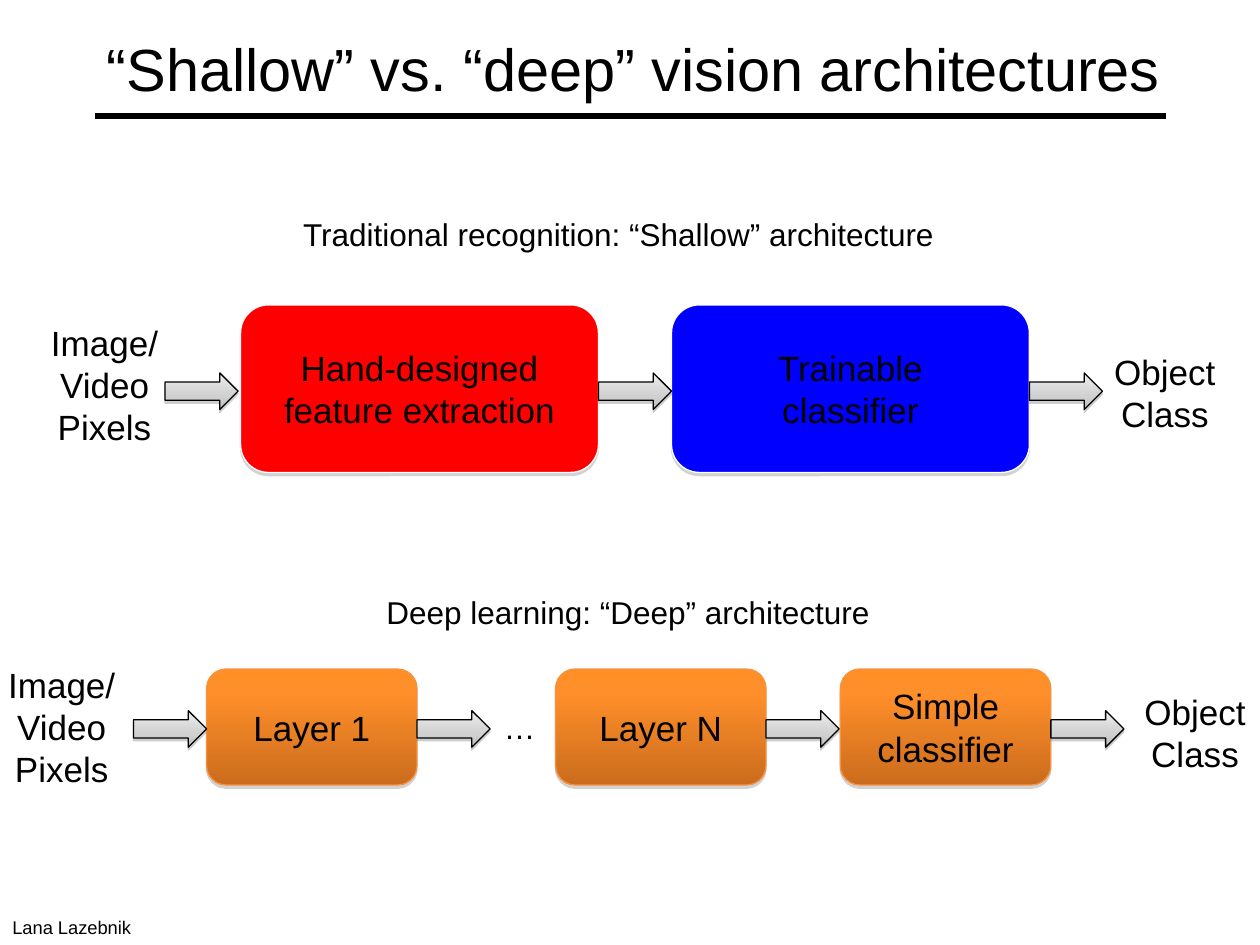
from dataclasses import dataclass

from lxml import etree
from pptx import Presentation
from pptx.dml.color import RGBColor
from pptx.enum.shapes import MSO_CONNECTOR, MSO_SHAPE
from pptx.enum.text import MSO_ANCHOR, MSO_AUTO_SIZE, PP_ALIGN
from pptx.oxml.ns import qn
from pptx.util import Inches, Pt

ROUNDED, ARROW = MSO_SHAPE.ROUNDED_RECTANGLE, MSO_SHAPE.RIGHT_ARROW
LEFT, CENTER = PP_ALIGN.LEFT, PP_ALIGN.CENTER
TOP, MIDDLE = MSO_ANCHOR.TOP, MSO_ANCHOR.MIDDLE

FONT = "Arial"
COLORS = {
    "ink": "000000",
    "white": "FFFFFF",
    "red": "FF0000",
    "blue": "0000FF",
    "orange_edge": "F69240",
    "shadow": "808080",
}
# Gradient stops: (position in percent, colour)
ORANGE = ((0, "FF8F26"), (20, "FF8F2A"), (100, "CB6C1D"))
GRAY = ((0, "EDEDED"), (65, "D0D0D0"), (100, "BCBCBC"))
ARROW_WIDTH, ARROW_HEIGHT = 0.58, 0.29


@dataclass
class Block:
    left: float
    text: str
    fill: str | tuple
    edge: str


@dataclass
class Pipeline:
    top: float
    width: float
    height: float
    arrow_top: float
    first_arrow: float
    blocks: list[Block]


@dataclass
class Label:
    left: float
    top: float
    width: float
    height: float
    paragraphs: list[str]
    size: float = 20
    wrap: bool = True
    align: PP_ALIGN = CENTER
    anchor: MSO_ANCHOR = TOP
    grow: bool = True


PIPELINES = [
    Pipeline(2.42, 2.84, 1.33, 2.96, 1.31, [
        Block(1.91, "Hand-designed\nfeature extraction", COLORS["red"], "white"),
        Block(5.33, "Trainable\nclassifier", COLORS["blue"], "white"),
    ]),
    Pipeline(5.31, 1.67, 0.92, 5.64, 1.06, [
        Block(1.64, "Layer 1", ORANGE, "orange_edge"),
        Block(4.41, "Layer N", ORANGE, "orange_edge"),
        Block(6.67, "Simple classifier", ORANGE, "orange_edge"),
    ]),
]

LABELS = [
    Label(0.75, 0.08, 8.69, 0.92, ["“Shallow” vs. “deep” vision architectures"],
          34, align=LEFT, anchor=MIDDLE, grow=False),
    Label(2.28, 1.66, 5.26, 0.4,
          ["Traditional recognition: “Shallow” architecture"], 18, wrap=False),
    Label(0.08, 2.5, 1.5, 1.11, ["Image/ Video", "Pixels"]),
    Label(8.74, 2.73, 1.01, 0.77, ["Object\nClass"], wrap=False),
    Label(2.95, 4.66, 4.07, 0.4, ["Deep learning: “Deep” architecture"], 18, wrap=False),
    Label(-0.25, 5.22, 1.48, 1.11, ["Image/ Video", "Pixels"]),
    Label(8.8, 5.43, 1.37, 0.77, ["Object Class"]),
    Label(3.9, 5.57, 0.54, 0.5, ["…"], 18, wrap=False, align=LEFT),
    Label(0, 7.22, 1.16, 0.28, ["Lana Lazebnik"], 10.5, wrap=False, align=LEFT),
]


def rgb(name: str) -> RGBColor:
    return RGBColor.from_string(COLORS[name])


def write(frame, paragraphs: list[str], size: float, align: PP_ALIGN) -> None:
    for index, text in enumerate(paragraphs):
        para = frame.paragraphs[0] if index == 0 else frame.add_paragraph()
        para.alignment = align
        for row, line in enumerate(text.split("\n")):
            if row:
                para.add_line_break()
            span = para.add_run()
            span.text = line
            span.font.name = FONT
            span.font.size = Pt(size)
            span.font.color.rgb = rgb("ink")


def paint(shape, fill: str | tuple) -> None:
    if isinstance(fill, str):
        shape.fill.solid()
        shape.fill.fore_color.rgb = RGBColor.from_string(fill)
        return
    shape.fill.gradient()
    shape.fill.gradient_angle = 270  # top to bottom
    stops = shape.element.spPr.find(f".//{qn('a:gsLst')}")
    for stop in list(stops):
        stops.remove(stop)
    for position, color in fill:
        stop = etree.SubElement(stops, qn("a:gs"), pos=str(position * 1000))
        etree.SubElement(stop, qn("a:srgbClr"), val=color)


def drop_shadow(shape, distance: float, opacity: int) -> None:
    shape.shadow.inherit = False
    effects = shape.element.spPr.find(qn("a:effectLst"))
    shadow = etree.SubElement(effects, qn("a:outerShdw"), blurRad="0",
                              dist=str(Pt(distance)), dir="5400000", rotWithShape="0")
    color = etree.SubElement(shadow, qn("a:srgbClr"), val=COLORS["shadow"])
    etree.SubElement(color, qn("a:alpha"), val=str(opacity * 1000))


def add_arrow(page, left: float, top: float) -> None:
    arrow = page.shapes.add_shape(ARROW, Inches(left), Inches(top),
                                  Inches(ARROW_WIDTH), Inches(ARROW_HEIGHT))
    paint(arrow, GRAY)
    arrow.line.color.rgb = rgb("ink")
    arrow.line.width = Pt(0.75)
    drop_shadow(arrow, 1.6, 38)


def add_pipeline(page, pipeline: Pipeline) -> None:
    for block in pipeline.blocks:
        box = page.shapes.add_shape(ROUNDED, Inches(block.left), Inches(pipeline.top),
                                    Inches(pipeline.width), Inches(pipeline.height))
        paint(box, block.fill)
        box.line.color.rgb = rgb(block.edge)
        box.line.width = Pt(0.75)
        drop_shadow(box, 1.8, 35)
        box.text_frame.word_wrap = True
        box.text_frame.vertical_anchor = MIDDLE
        write(box.text_frame, [block.text], 20, CENTER)
    # One arrow leads in, then one leaves the right side of each block
    exits = [block.left + pipeline.width for block in pipeline.blocks]
    for left in [pipeline.first_arrow, *exits]:
        add_arrow(page, left, pipeline.arrow_top)


def add_label(page, label: Label) -> None:
    box = page.shapes.add_textbox(Inches(label.left), Inches(label.top),
                                  Inches(label.width), Inches(label.height))
    frame = box.text_frame
    frame.word_wrap = label.wrap
    frame.vertical_anchor = label.anchor
    frame.auto_size = MSO_AUTO_SIZE.SHAPE_TO_FIT_TEXT if label.grow else MSO_AUTO_SIZE.NONE
    write(frame, label.paragraphs, label.size, label.align)


def add_title_rule(page) -> None:
    rule = page.shapes.add_connector(MSO_CONNECTOR.STRAIGHT, Inches(0.75), Inches(0.92),
                                     Inches(9.25), Inches(0.92))
    rule.line.color.rgb = rgb("ink")
    rule.line.width = Pt(3)
    etree.SubElement(rule.element.spPr, qn("a:effectLst"))


def main() -> None:
    deck = Presentation()
    deck.slide_width, deck.slide_height = Inches(10), Inches(7.5)
    page = deck.slides.add_slide(deck.slide_layouts[6])
    add_title_rule(page)
    # Block diagrams
    for pipeline in PIPELINES:
        add_pipeline(page, pipeline)
    # Title, captions, inputs, outputs and credit
    for label in LABELS:
        add_label(page, label)
    deck.save("out.pptx")


if __name__ == "__main__":
    main()
